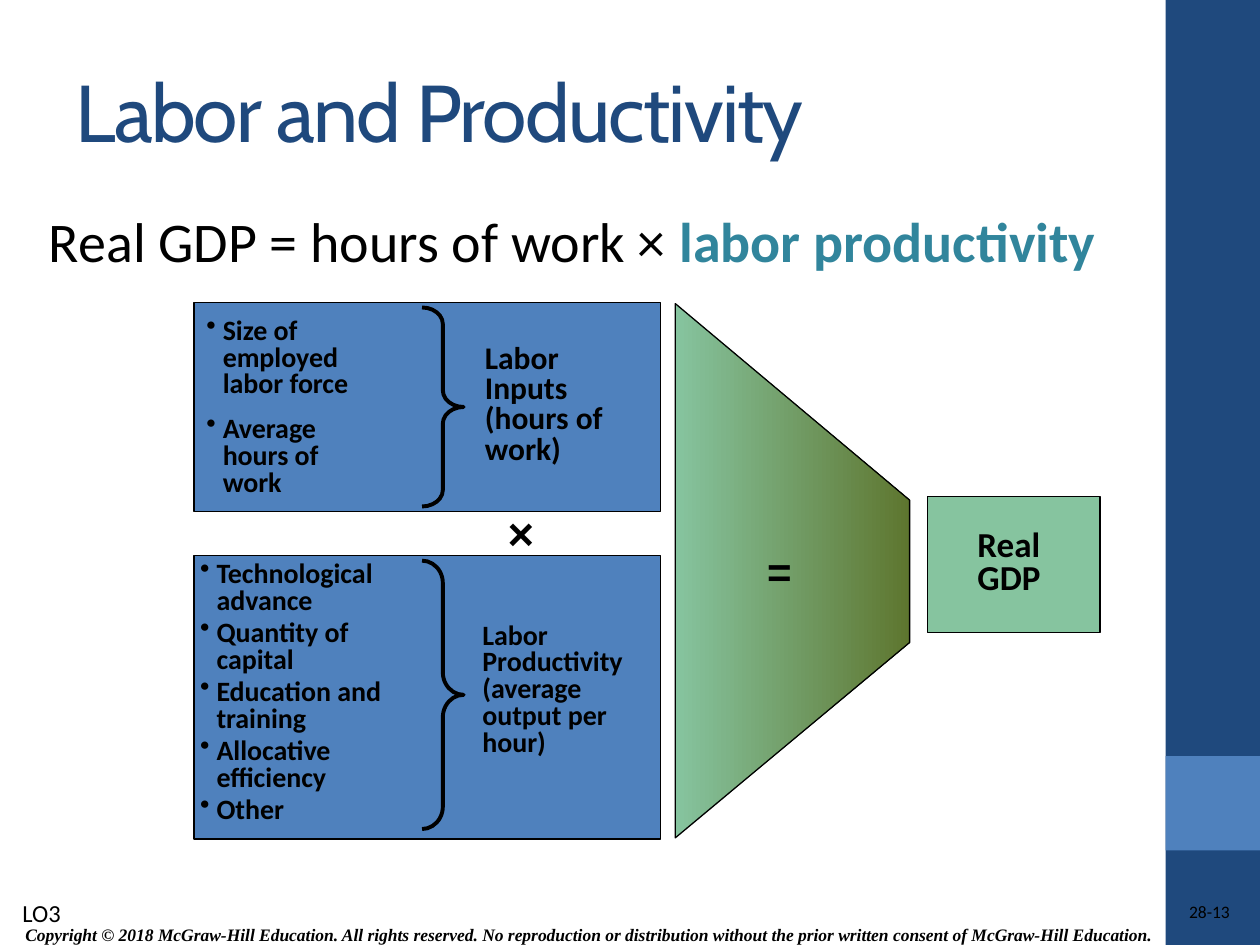
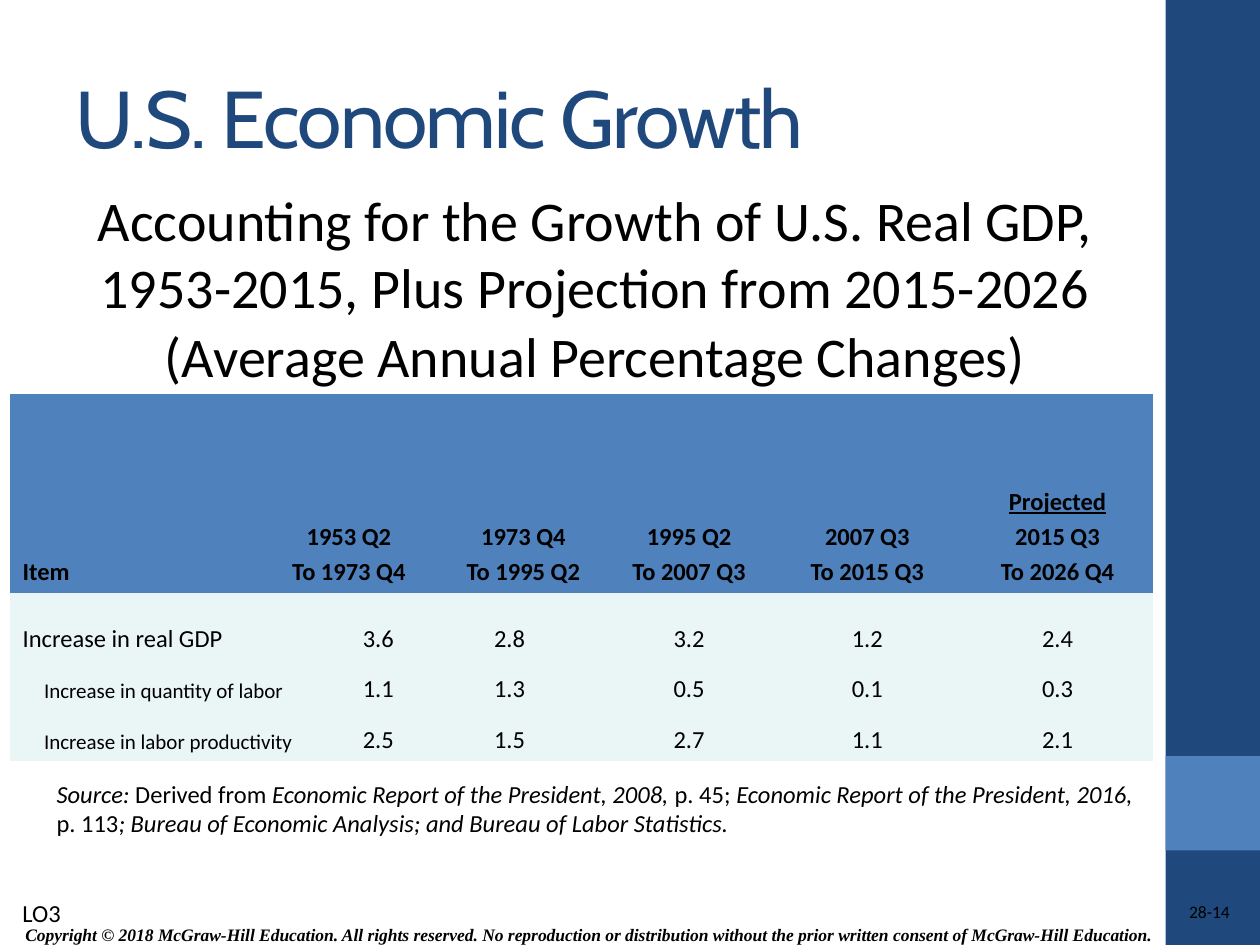
from dataclasses import dataclass

from lxml import etree
from pptx import Presentation
from pptx import util as u
from pptx.dml.color import RGBColor
from pptx.enum import shapes, text
from pptx.oxml.ns import qn


@dataclass(frozen=True)
class Theme:
    navy: str = "1F497D"
    blue: str = "4F81BD"
    teal: str = "31859C"
    mint: str = "86C49F"
    olive: str = "5E762F"
    pale: str = "EAF5F6"
    black: str = "000000"
    title_font: str = "Cabin"
    body_font: str = "Calibri"
    symbol_font: str = "Arial"
    legal_font: str = "Times New Roman"
    title_size: int = 46
    lead_size: int = 32
    result_size: int = 20
    label_size: int = 18
    factor_size: int = 16
    table_size: int = 14
    detail_size: int = 12
    footer_size: int = 10


@dataclass(frozen=True)
class Box:
    left: float
    top: float
    width: float
    height: float

    def inner(self, left, top, width, height):
        return Box(self.left + left, self.top + top, width, height)

    def lengths(self):
        return [u.Inches(value) for value in (self.left, self.top, self.width, self.height)]


THEME = Theme()
CENTER = text.PP_ALIGN.CENTER
NO_GRID_STYLE = "{2D5ABB26-0587-4C30-8999-92F81FD0307C}"
COPYRIGHT = (
    "Copyright © 2018 McGraw-Hill Education. All rights reserved. No reproduction or "
    "distribution without the prior written consent of McGraw-Hill Education."
)


def color(value):
    return RGBColor.from_string(value)


def add_run(paragraph, words, size, font=THEME.body_font, fill=THEME.black,
            bold=False, italic=False, underline=False):
    run = paragraph.add_run()
    run.text = words
    run.font.name = font
    run.font.size = u.Pt(size)
    run.font.bold = bold
    run.font.italic = italic
    run.font.underline = underline
    run.font.color.rgb = color(fill)
    return run


def add_bullet(paragraph):
    properties = paragraph._p.get_or_add_pPr()
    indent = u.Inches(0.13)
    properties.set("marL", str(indent))
    properties.set("indent", str(-indent))
    etree.SubElement(properties, qn("a:buChar")).set("char", "•")


def fill_paragraphs(frame, paragraphs, size, align=None, line_spacing=None,
                    gap=0, bullets=False, **style):
    for index, runs in enumerate(paragraphs):
        paragraph = frame.add_paragraph() if index else frame.paragraphs[0]
        if bullets:
            add_bullet(paragraph)
        paragraph.alignment = align
        paragraph.line_spacing = line_spacing
        if index and gap:
            paragraph.space_before = u.Pt(gap)
        if isinstance(runs, str):
            runs = [(runs, {})]
        for words, changes in runs:
            add_run(paragraph, words, size, **{**style, **changes})


def add_text(slide, box, paragraphs, size, anchor=text.MSO_ANCHOR.TOP, inset=True, **style):
    frame = slide.shapes.add_textbox(*box.lengths()).text_frame
    frame.word_wrap = True
    frame.vertical_anchor = anchor
    if not inset:
        frame.margin_left = frame.margin_right = frame.margin_top = frame.margin_bottom = 0
    fill_paragraphs(frame, paragraphs, size, **style)


def outline(shape, width):
    shape.shadow.inherit = False
    shape.line.color.rgb = color(THEME.black)
    shape.line.width = u.Pt(width)


def add_rectangle(slide, box, fill, outlined=True):
    shape = slide.shapes.add_shape(shapes.MSO_SHAPE.RECTANGLE, *box.lengths())
    shape.fill.solid()
    shape.fill.fore_color.rgb = color(fill)
    outline(shape, 0.75)
    if not outlined:
        shape.line.fill.background()


def add_base_slide(presentation, title, title_top, number):
    slide = presentation.slides.add_slide(presentation.slide_layouts[5])
    band = Box(9.25, 0, 0.75, 7.5)
    add_rectangle(slide, band, THEME.navy, outlined=False)
    add_rectangle(slide, band.inner(0, 6, 0.75, 0.75), THEME.blue, outlined=False)
    add_text(slide, Box(0.06, 7.28, 9.22, 0.28), [COPYRIGHT], THEME.footer_size,
             anchor=text.MSO_ANCHOR.MIDDLE, align=CENTER, font=THEME.legal_font,
             bold=True, italic=True)
    add_text(slide, Box(7.81, 7.15, 1.95, 0.2), [number], THEME.footer_size,
             inset=False, align=text.PP_ALIGN.RIGHT)
    add_text(slide, Box(0.08, 7.08, 0.6, 0.34), ["LO3"], THEME.table_size)

    heading = slide.shapes.title
    heading.left, heading.top, heading.width, heading.height = Box(
        0.5, title_top, 8.33, 1.25).lengths()
    frame = heading.text_frame
    frame.auto_size = text.MSO_AUTO_SIZE.NONE
    frame.vertical_anchor = text.MSO_ANCHOR.MIDDLE
    paragraph = frame.paragraphs[0]
    paragraph.alignment = text.PP_ALIGN.LEFT
    run = add_run(paragraph, title, THEME.title_size, THEME.title_font, THEME.navy)
    run.font._element.set("spc", "-100")
    return slide


def add_factor_panel(slide, box, factors, factor_box, gap, label, label_box, label_size,
                     brace_height, brace_curve):
    add_rectangle(slide, box, THEME.blue)
    add_text(slide, box.inner(*factor_box), factors, THEME.factor_size,
             line_spacing=0.8, gap=gap, bullets=True, bold=True)
    add_text(slide, box.inner(*label_box), label, label_size, line_spacing=0.8, bold=True)
    brace = slide.shapes.add_shape(
        shapes.MSO_SHAPE.RIGHT_BRACE, *box.inner(1.81, 0.04, 0.33, brace_height).lengths())
    brace.adjustments[0] = brace_curve
    brace.fill.background()
    outline(brace, 2.25)


def add_funnel(slide, box):
    right, bottom = box.left + box.width, box.top + box.height
    corners = [(box.left, box.top), (right, box.top + 1.56),
               (right, bottom - 1.55), (box.left, bottom)]
    points = [(u.Inches(x), u.Inches(y)) for x, y in corners]
    builder = slide.shapes.build_freeform(*points[0])
    builder.add_line_segments(points[1:], close=True)
    funnel = builder.convert_to_shape()
    funnel.fill.gradient()
    funnel.fill.gradient_angle = 0
    for stop, position, shade in zip(funnel.fill.gradient_stops, (0, 1),
                                     (THEME.mint, THEME.olive)):
        stop.position = position
        stop.color.rgb = color(shade)
    outline(funnel, 0.75)
    add_text(slide, box.inner(0.63, 1.87, 0.59, 0.51), ["="], 24,
             font=THEME.symbol_font, bold=True)


def add_result(slide, box):
    add_rectangle(slide, box, THEME.mint)
    add_text(slide, box.inner(0.3, 0.22, 0.9, 0.64), ["Real", "GDP"], THEME.result_size,
             line_spacing=0.8, bold=True)


def build_productivity_slide(presentation):
    slide = add_base_slide(presentation, "Labor and Productivity", 0.25, "28-13")
    equation = [("Real GDP = hours of work × ", {}),
                ("labor productivity", {"fill": THEME.teal, "bold": True})]
    add_text(slide, Box(0.29, 1.59, 9.02, 0.64), [equation], THEME.lead_size)
    add_factor_panel(
        slide, Box(1.54, 2.4, 3.7, 1.66),
        ["Size of employed labor force", "Average hours of work"], (0, 0.08, 1.4, 1.52), 10,
        ["Labor", "Inputs", "(hours of", "work)"], (2.21, 0.29, 1.25, 1.07),
        THEME.label_size, 1.58, 0.4)
    add_factor_panel(
        slide, Box(1.54, 4.41, 3.7, 2.25),
        ["Technological advance", "Quantity of capital", "Education and training",
         "Allocative efficiency", "Other"], (-0.05, 0, 1.95, 2.24), 3,
        ["Labor", "Productivity", "(average output per hour)"], (2.19, 0.49, 1.55, 1.17),
        THEME.factor_size, 2.13, 0.54)
    add_text(slide, Box(3.93, 3.96, 0.58, 0.54), ["×"], 26,
             font=THEME.symbol_font, bold=True)
    add_funnel(slide, Box(5.36, 2.41, 1.86, 4.24))
    add_result(slide, Box(7.36, 3.94, 1.37, 1.08))


def fill_cell(cell, paragraphs, size=THEME.table_size, **style):
    cell.vertical_anchor = text.MSO_ANCHOR.BOTTOM
    fill_paragraphs(cell.text_frame, paragraphs, size, gap=3, **style)


def add_growth_table(slide, box):
    widths = [1.96, 0.74, 0.5, 0.22, 1.31, 1.32, 1.51, 1.51]
    heights = [1.58, 0.53, 0.4, 0.4]
    periods = {
        1: ["1953 Q2", "To 1973 Q4"],
        4: ["1973 Q4", "To 1995 Q2"],
        5: ["1995 Q2", "To 2007 Q3"],
        6: ["2007 Q3", "To 2015 Q3"],
        7: [[("Projected", {"underline": True})], "2015 Q3", "To 2026 Q4"],
    }
    rows = [
        ("Increase in real GDP", ["3.6", "2.8", "3.2", "1.2", "2.4"]),
        ("Increase in quantity of labor", ["1.1", "1.3", "0.5", "0.1", "0.3"]),
        ("Increase in labor productivity", ["2.5", "1.5", "2.7", "1.1", "2.1"]),
    ]
    table = slide.shapes.add_table(len(heights), len(widths), *box.lengths()).table
    table.first_row = table.horz_banding = False
    table._tbl.tblPr.find(qn("a:tableStyleId")).text = NO_GRID_STYLE
    for column, width in zip(table.columns, widths):
        column.width = u.Inches(width)
    for index, (row, height) in enumerate(zip(table.rows, heights)):
        row.height = u.Inches(height)
        for cell in row.cells:
            cell.fill.solid()
            cell.fill.fore_color.rgb = color(THEME.pale if index else THEME.blue)

    table.cell(0, 1).merge(table.cell(0, 3))
    fill_cell(table.cell(0, 0), ["Item"], bold=True)
    for column, period in periods.items():
        fill_cell(table.cell(0, column), period, align=CENTER, bold=True)
    for index, (item, values) in enumerate(rows, 1):
        table.cell(index, 0).merge(table.cell(index, 1))
        table.cell(index, 3).merge(table.cell(index, 4))
        detail = index > 1
        if detail:
            table.cell(index, 0).margin_left = u.Inches(0.27)
        fill_cell(table.cell(index, 0), [item],
                  THEME.detail_size if detail else THEME.table_size)
        for column, value in zip((2, 3, 5, 6, 7), values):
            fill_cell(table.cell(index, column), [value],
                      align=None if column == 2 else CENTER)


def build_growth_slide(presentation):
    slide = add_base_slide(presentation, "U.S. Economic Growth", 0.3, "28-14")
    add_growth_table(slide, Box(0.08, 3.13, 9.08, 2.91))
    body = Box(0.35, 1.42, 8.75, 5.28)
    add_text(slide, body.inner(0, 0, 8.75, 1.18),
             ["Accounting for the Growth of U.S. Real GDP, 1953-2015, "
              "Plus Projection from 2015-2026"], THEME.lead_size, align=CENTER)
    add_text(slide, body.inner(0, 1.08, 8.75, 0.63),
             ["(Average Annual Percentage Changes)"], THEME.lead_size, align=CENTER)
    italic = {"italic": True}
    source = [
        ("Source:", italic),
        (" Derived from ", {}),
        ("Economic Report of the President, 2008, ", italic),
        ("p. 45; ", {}),
        ("Economic Report of the President, 2016,", italic),
        (" p. 113", {}),
        ("; Bureau of Economic Analysis; and Bureau of Labor Statistics.", italic),
    ]
    add_text(slide, body.inner(0, 4.71, 8.75, 0.57), [source], THEME.table_size)


def main():
    presentation = Presentation()
    presentation.slide_width = u.Inches(10)
    presentation.slide_height = u.Inches(7.5)
    build_productivity_slide(presentation)
    build_growth_slide(presentation)
    presentation.save("out.pptx")


if __name__ == "__main__":
    main()
